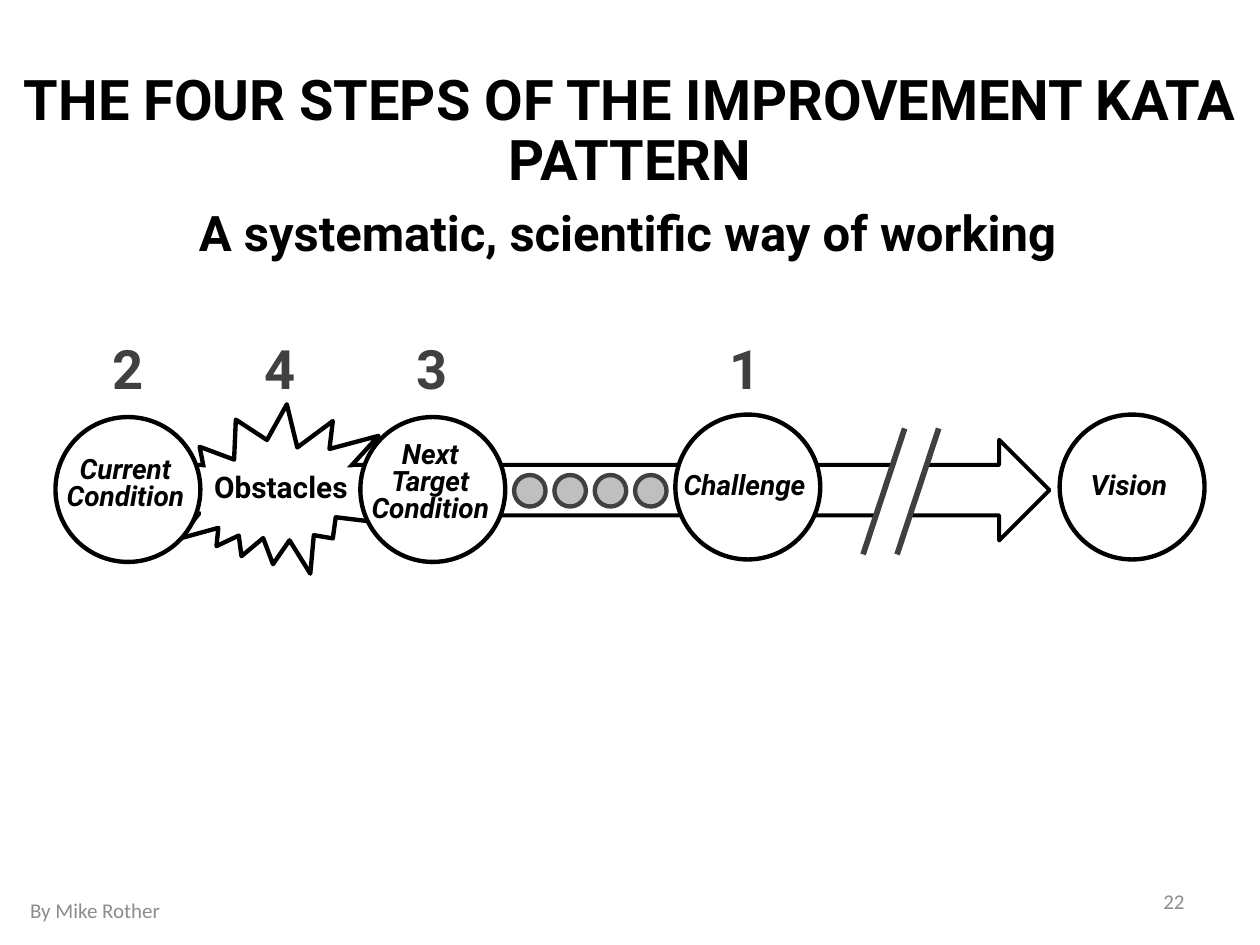
from lxml.etree import SubElement
from pptx import Presentation
from pptx.dml.color import RGBColor
from pptx.enum.shapes import MSO_CONNECTOR as Conn, MSO_SHAPE as Shape
from pptx.enum.text import MSO_ANCHOR as Anchor, PP_ALIGN as Align
from pptx.oxml.ns import qn
from pptx.util import Inches, Pt

BLACK, WHITE, DARK, GREY, PALE = "000000", "FFFFFF", "404040", "8C8C8C", "BFBFBF"
BOLD = {"name": "Roboto", "bold": True}
LABEL = {**BOLD, "size": Pt(16), "italic": True}
FOOT = {"name": "Calibri", "size": Pt(12)}
WIDE, SLIM = (0.1, 0.05), (0.09, 0.04)
DISC = 1.15


def color(code):
    return RGBColor.from_string(code)


def add_shape(slide, kind, box, fill=WHITE, line=None, width=2.5, turn=0):
    shape = slide.shapes.add_shape(kind, *map(Inches, box))
    shape.shadow.inherit = False
    shape.rotation = turn
    shape.fill.solid()
    shape.fill.fore_color.rgb = color(fill)
    if line:
        shape.line.color.rgb = color(line)
        shape.line.width = Pt(width)
    else:
        shape.line.fill.background()


def add_text(slide, box, lines, style, ink=BLACK, align=Align.CENTER,
             pad=WIDE, gap=None, anchor=Anchor.TOP, wrap=True):
    frame = slide.shapes.add_textbox(*map(Inches, box)).text_frame
    frame.word_wrap = wrap
    frame.vertical_anchor = anchor
    frame.margin_left = frame.margin_right = Inches(pad[0])
    frame.margin_top = frame.margin_bottom = Inches(pad[1])
    frame.text = "\n".join(lines)
    for para in frame.paragraphs:
        para.alignment = align
        para.line_spacing = gap
        for key, value in style.items():
            setattr(para.font, key, value)
        para.font.color.rgb = color(ink)


def add_disc(slide, left, top, lines, box):
    """Draw a labelled circle; the label box is relative to its corner."""
    add_shape(slide, Shape.OVAL, (left, top, DISC, DISC), line=BLACK)
    x, y, w, h = box
    add_text(slide, (left + x, top + y, w, h), lines, LABEL, gap=0.8)


def add_break(slide, left, top):
    """Cut the arrow with a white gap between two slanted strokes."""
    add_shape(slide, Shape.RECTANGLE, (left + 0.17, top + 0.13, 0.25, 0.75), turn=19)
    for x in (left, left + 0.27):
        ends = (x + 0.33, top, x, top + 1)
        stroke = slide.shapes.add_connector(Conn.STRAIGHT, *map(Inches, ends))
        stroke.line.color.rgb = color(DARK)
        stroke.line.width = Pt(3.25)
        SubElement(stroke._element.spPr, qn("a:effectLst"))


def add_burst(slide, left, top):
    add_shape(slide, Shape.EXPLOSION2, (left, top, 1.51, 1.64), line=BLACK, turn=39.9)
    add_shape(slide, Shape.RECTANGLE, (left - 0.41, top + 0.62, 2.58, 0.35))


def add_head(slide, top):
    add_text(slide, (0, top, 10, 1.07),
             ["THE FOUR STEPS OF THE IMPROVEMENT KATA PATTERN"],
             {**BOLD, "size": Pt(32)}, pad=SLIM, gap=0.9)
    add_text(slide, (0.7, top + 1.03, 8.56, 0.57),
             ["A systematic, scientific way of working"],
             {**BOLD, "size": Pt(28)})


def add_path(slide, left, top):
    """Draw the way from current condition to vision."""
    single = (-0.13, 0.42, 1.36, 0.33)
    add_shape(slide, Shape.RIGHT_ARROW, (left + 0.41, top + 0.87, 7.48, 0.8),
              line=BLACK, width=2.25)
    add_disc(slide, left + 7.97, top + 0.67, ["Vision"], single)
    add_break(slide, left + 6.41, top + 0.78)
    add_burst(slide, left + 1.07, top + 0.47)
    add_disc(slide, left + 2.42, top + 0.69, ["Next", "Target", "Condition"],
             (-0.07, 0.16, 1.25, 0.76))
    add_disc(slide, left, top + 0.69, ["Current", "Condition"],
             (-0.07, 0.28, 1.25, 0.54))
    add_text(slide, (left + 1.12, top + 1.05, 1.34, 0.39), ["Obstacles"],
             {**BOLD, "size": Pt(17)}, wrap=False)
    add_disc(slide, left + 4.92, top + 0.67, ["Challenge"], single)
    for step, x in (("1", 5.14), ("2", 0.25), ("3", 2.66), ("4", 1.45)):
        add_text(slide, (left + x, top, 0.66, 0.61), [step],
                 {**BOLD, "size": Pt(31)}, ink=DARK, pad=SLIM)
    for i in range(4):
        add_shape(slide, Shape.OVAL,
                  (left + 3.64 + 0.32 * i, top + 1.15, 0.25, 0.25), PALE, DARK)


def add_foot(slide):
    for box, words, align in (
        ((0.14, 7.02, 3.17, 0.4), "By Mike Rother", Align.LEFT),
        ((7.17, 6.95, 2.33, 0.4), "22", Align.RIGHT),
    ):
        add_text(slide, box, [words], FOOT, GREY, align, anchor=Anchor.MIDDLE)


def main():
    deck = Presentation()
    deck.slide_width, deck.slide_height = Inches(10), Inches(7.5)
    slide = deck.slides.add_slide(deck.slide_layouts[6])
    add_head(slide, 0.53)
    add_path(slide, 0.44, 2.62)
    add_foot(slide)
    deck.save("out.pptx")


if __name__ == "__main__":
    main()
